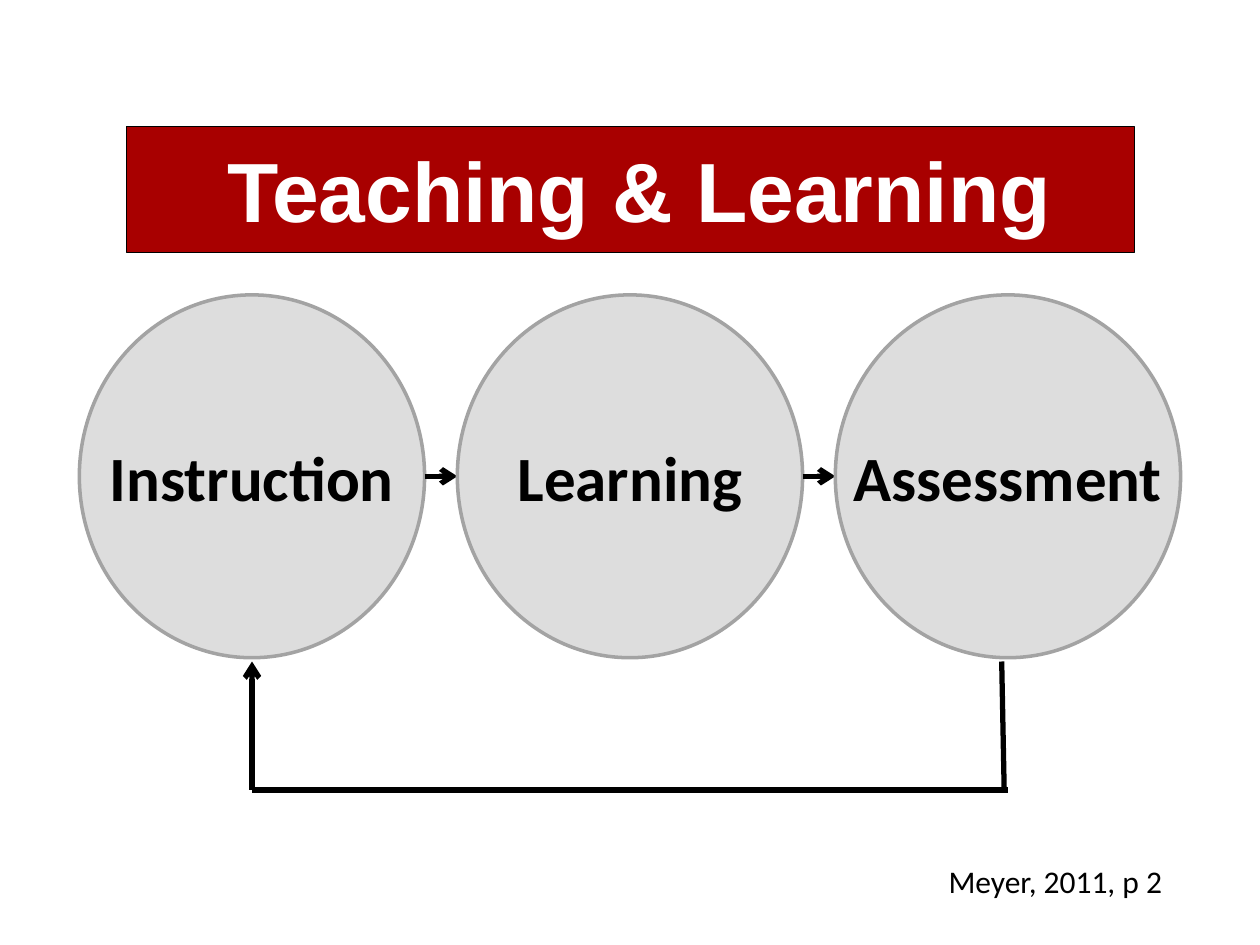
from dataclasses import dataclass

from pptx import Presentation
from pptx.dml.color import RGBColor as RGB
from pptx.enum.shapes import MSO_CONNECTOR as CONN, MSO_SHAPE as SHAPE
from pptx.enum.text import MSO_ANCHOR as ANCHOR, MSO_AUTO_SIZE as FIT, PP_ALIGN as ALIGN
from pptx.oxml.ns import qn
from pptx.util import Inches, Pt
from lxml.etree import SubElement


@dataclass(frozen=True)
class Theme:
    banner: RGB = RGB(0xA8, 0x00, 0x00)
    white: RGB = RGB(0xFF, 0xFF, 0xFF)
    ink: RGB = RGB(0x00, 0x00, 0x00)
    circle: RGB = RGB(0xDD, 0xDD, 0xDD)
    rim: RGB = RGB(0xA3, 0xA3, 0xA3)
    heading_font: str = "Arial"
    body_font: str = "Calibri"
    title_size: int = 48
    label_size: int = 36
    source_size: int = 18


class Deck:
    def __init__(self, theme):
        self.theme = theme
        self.prs = Presentation()
        self.prs.slide_width, self.prs.slide_height = Inches(10), Inches(7.5)
        self.slide = self.prs.slides.add_slide(self.prs.slide_layouts[5])

    def paint(self, sp, fill, line, width):
        sp.fill.solid()
        sp.fill.fore_color.rgb = fill
        sp.line.color.rgb = line
        sp.line.width = Pt(width)

    def run(self, tf, text, font, size, color, bold=False, align=ALIGN.LEFT):
        p = tf.paragraphs[0]
        p.alignment = align
        r = p.add_run()
        r.text = text
        r.font.name, r.font.size, r.font.bold = font, Pt(size), bold
        r.font.color.rgb = color

    def title(self, text, x, y, w, h):
        t = self.theme
        sp = self.slide.shapes.title
        sp.left, sp.top, sp.width, sp.height = map(Inches, (x, y, w, h))
        self.paint(sp, t.banner, t.ink, 0.25)
        tf = sp.text_frame
        tf.auto_size, tf.vertical_anchor = FIT.NONE, ANCHOR.MIDDLE
        tf.margin_left, tf.margin_right = Inches(0.25), Inches(0.1)
        tf.margin_top = tf.margin_bottom = 0
        self.run(tf, text, t.heading_font, t.title_size, t.white, True, ALIGN.CENTER)

    def text(self, text, x, y, w, h, size, bold=False, align=ALIGN.LEFT):
        tf = self.slide.shapes.add_textbox(*map(Inches, (x, y, w, h))).text_frame
        tf.word_wrap, tf.auto_size = True, FIT.SHAPE_TO_FIT_TEXT
        self.run(tf, text, self.theme.body_font, size, self.theme.ink, bold, align)

    def circle(self, x, y, w, h):
        sp = self.slide.shapes.add_shape(SHAPE.OVAL, *map(Inches, (x, y, w, h)))
        sp.shadow.inherit = False
        self.paint(sp, self.theme.circle, self.theme.rim, 2)

    def line(self, x1, y1, x2, y2, arrow=False):
        cx = self.slide.shapes.add_connector(CONN.STRAIGHT, *map(Inches, (x1, y1, x2, y2)))
        cx.line.color.rgb = self.theme.ink
        cx.line.width = Pt(3)
        props = cx._element.spPr
        if arrow:
            SubElement(props.find(qn("a:ln")), qn("a:tailEnd"), type="arrow")
        SubElement(props, qn("a:effectLst"))


def main():
    theme = Theme()
    deck = Deck(theme)
    deck.title("Teaching & Learning", 1, 1, 8, 1)
    deck.text("Meyer, 2011, p 2", 7.43, 6.79, 2.12, 0.4, theme.source_size)

    stages = ["Instruction", "Learning", "Assessment"]
    left, top, width, height, pitch = 0.63, 2.34, 2.74, 2.88, 3
    middle = top + height / 2
    for i, stage in enumerate(stages):
        x = left + i * pitch
        deck.circle(x, top, width, height)
        deck.text(stage, x, 3.43, width, 0.71, theme.label_size, True, ALIGN.CENTER)
        if i < len(stages) - 1:
            deck.line(x + width, middle, x + pitch, middle, arrow=True)

    loop_top, loop_bottom = 5.25, 6.27
    deck.line(2, loop_bottom, 2, loop_top, arrow=True)
    deck.line(2, loop_bottom, 8, loop_bottom)
    deck.line(7.97, loop_bottom, 7.95, loop_top)
    deck.prs.save("out.pptx")


if __name__ == "__main__":
    main()
